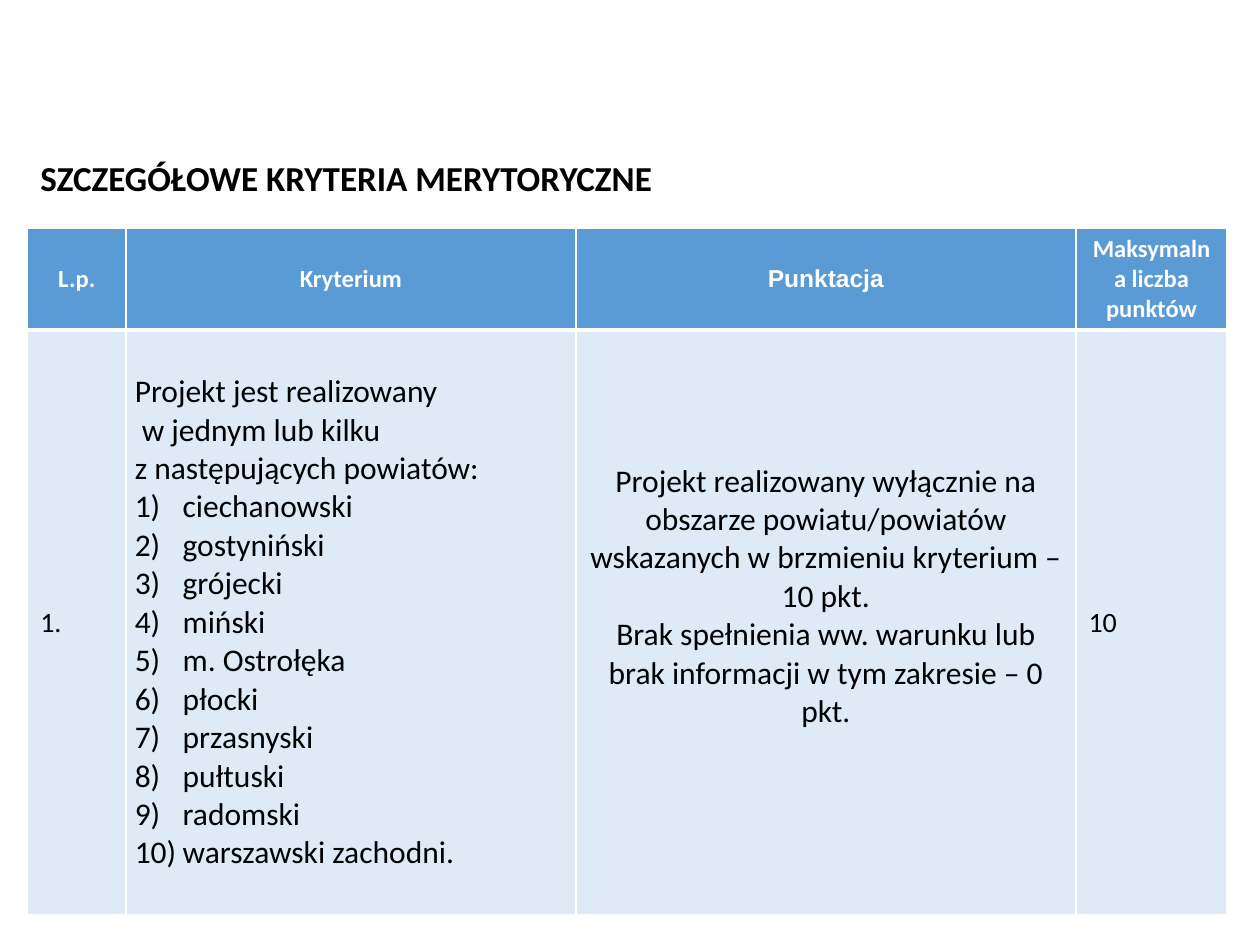
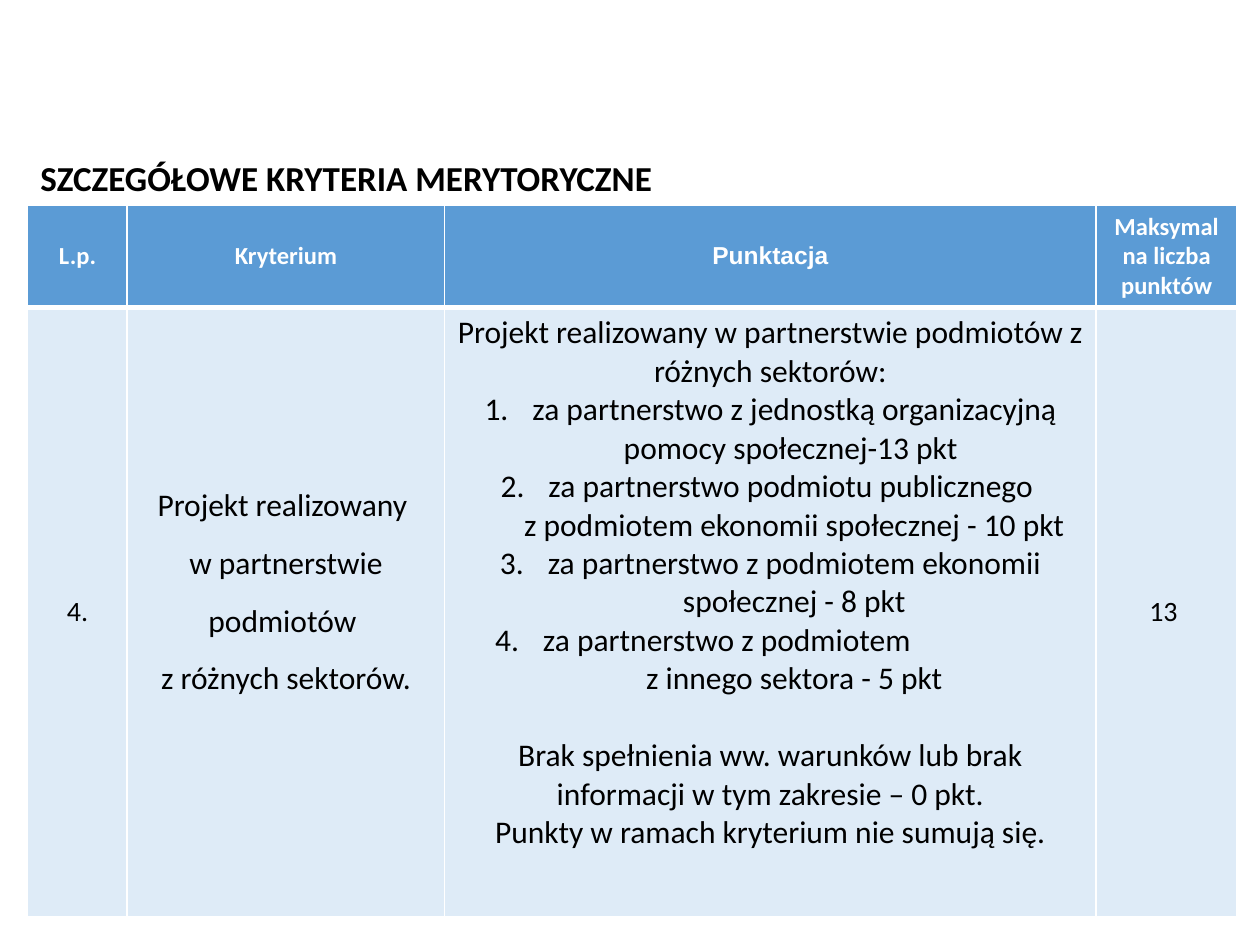
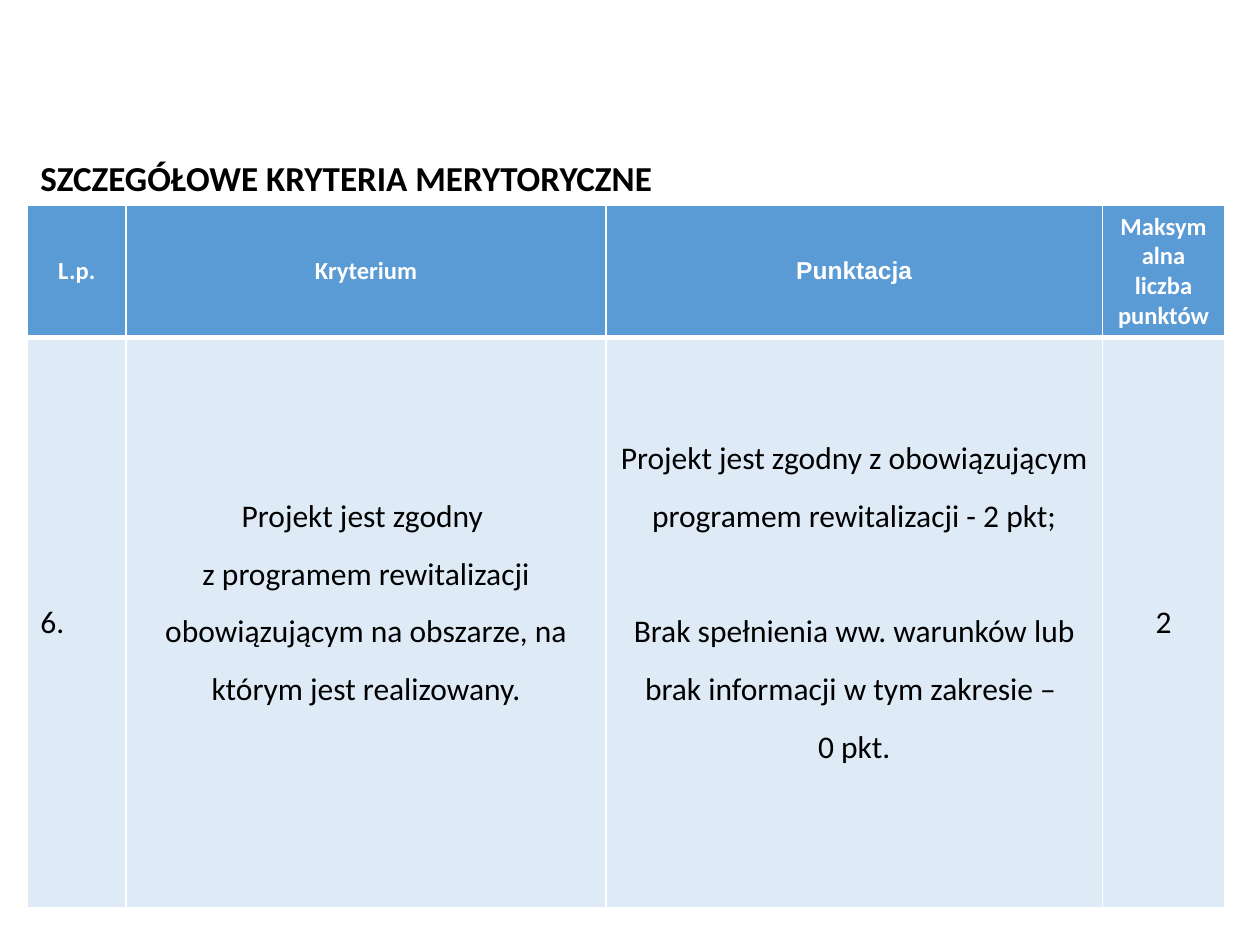
from dataclasses import dataclass, field

from lxml import etree
from pptx import Presentation
from pptx import util as u
from pptx.dml.color import RGBColor
from pptx.enum import text
from pptx.oxml import ns

WHITE = RGBColor(0xFF, 0xFF, 0xFF)
BLACK = RGBColor(0x00, 0x00, 0x00)
HEADER_BLUE = RGBColor(0x5B, 0x9B, 0xD5)
ROW_BLUE = RGBColor(0xDE, 0xEB, 0xF7)
LEFT, CENTER = text.PP_ALIGN.LEFT, text.PP_ALIGN.CENTER
MIDDLE = text.MSO_ANCHOR.MIDDLE

HEADING = "SZCZEGÓŁOWE KRYTERIA MERYTORYCZNE"
EDGE = 0.22
HEADING_BOX = (EDGE, 1.19, 9.35, 0.44)
HEADING_FORMAT = {"name": "Calibri", "size": u.Pt(20), "bold": True}
HEADER_FORMAT = {"name": "Calibri", "size": u.Pt(14), "bold": True}
BODY_FORMAT = {"name": "Calibri", "size": u.Pt(18), "bold": False}
HEADERS = [("L.p.", "Calibri"), ("Kryterium", "Calibri"),
           ("Punktacja", "Arial"), ("Maksymalna liczba punktów", "Calibri")]
HANGING = 0.38
COUNTIES = ["ciechanowski", "gostyniński", "grójecki", "miński", "m. Ostrołęka",
            "płocki", "przasnyski", "pułtuski", "radomski", "warszawski zachodni."]


@dataclass
class Line:
    words: str
    align: int = CENTER
    size: int = 18
    spacing: float = 1.0
    before: int = 0
    number: str = ""
    start: int = 1
    indent: float = 0


@dataclass
class Content:
    lines: list
    margins: dict = field(default_factory=dict)


def set_attributes(target, values):
    for name, value in values.items():
        setattr(target, name, value)


def criterion(*lines, bottom=0):
    return Content(lines, {"margin_left": u.Inches(0.07), "margin_right": u.Inches(0.07),
                           "margin_top": 0, "margin_bottom": u.Inches(bottom)})


def scoring(*lines, bottom=0.05):
    return Content(lines, {"margin_bottom": u.Inches(bottom)})


def single(words, align=CENTER, size=16):
    return Content([Line(words, align, size)])


def style_runs(paragraph, values, color):
    for run in paragraph.runs:
        set_attributes(run.font, values)
        run.font.color.rgb = color


def set_indent(paragraph, line):
    properties = paragraph._p.get_or_add_pPr()
    properties.set("marL", str(u.Inches(line.indent)))
    if line.number:
        properties.set("indent", str(-u.Inches(HANGING)))
        numbering = etree.SubElement(properties, ns.qn("a:buAutoNum"), type=line.number)
        if line.start > 1:
            numbering.set("startAt", str(line.start))


def write_line(paragraph, line, values, color):
    paragraph.text = line.words
    if line.indent:
        set_indent(paragraph, line)
    set_attributes(paragraph, {"alignment": line.align, "line_spacing": line.spacing,
                               "space_before": u.Pt(line.before)})
    style_runs(paragraph, {**values, "size": u.Pt(line.size)}, color)


def draw_borders(cell, widths):
    properties = cell._tc.get_or_add_tcPr()
    for side, width in widths.items():
        border = etree.SubElement(properties, ns.qn(f"a:ln{side}"), w=str(u.Pt(width)))
        fill = etree.SubElement(border, ns.qn("a:solidFill"))
        etree.SubElement(fill, ns.qn("a:srgbClr"), val=str(WHITE))


def fill_cell(cell, content, values, color, background, borders):
    draw_borders(cell, borders)
    cell.fill.solid()
    cell.fill.fore_color.rgb = background
    set_attributes(cell, {"vertical_anchor": MIDDLE, **content.margins})
    frame = cell.text_frame
    for index, line in enumerate(content.lines):
        paragraph = frame.add_paragraph() if index else frame.paragraphs[0]
        write_line(paragraph, line, values, color)


def add_heading(slide, box):
    title = slide.shapes.title
    set_attributes(title, dict(zip(("left", "top", "width", "height"), map(u.Inches, box))))
    frame = title.text_frame
    frame.text = HEADING
    set_attributes(frame, {"vertical_anchor": MIDDLE, "word_wrap": True,
                           "auto_size": text.MSO_AUTO_SIZE.NONE})
    frame.paragraphs[0].alignment = LEFT
    style_runs(frame.paragraphs[0], HEADING_FORMAT, BLACK)


def add_criteria_table(slide, left, top, columns, rows, contents):
    box = map(u.Inches, (left, top, sum(columns), sum(rows)))
    table = slide.shapes.add_table(len(rows), len(columns), *box).table
    for column, width in zip(table.columns, columns):
        column.width = u.Inches(width)
    for row, height in zip(table.rows, rows):
        row.height = u.Inches(height)
    for index, (label, font) in enumerate(HEADERS):
        fill_cell(table.cell(0, index), Content([Line(label, size=14)]),
                  {**HEADER_FORMAT, "name": font}, WHITE, HEADER_BLUE,
                  {"L": 1, "R": 1, "T": 1, "B": 3})
    for index, content in enumerate(contents):
        fill_cell(table.cell(1, index), content, BODY_FORMAT, BLACK, ROW_BLUE,
                  {"L": 1, "R": 1, "T": 3, "B": 1})


def numbered(words, style, align=CENTER, **options):
    return Line(words, align, number=style, **{"indent": HANGING, **options})


CRITERIA = [
    dict(top=1.81, columns=(0.78, 3.57, 3.97, 1.2), rows=(0.81, 4.64), contents=[
        single("1.", LEFT),
        criterion(Line("Projekt jest realizowany\n w jednym lub kilku \nz następujących powiatów:", LEFT),
                  *[numbered(county, "arabicParenR", LEFT) for county in COUNTIES]),
        scoring(Line("Projekt realizowany wyłącznie na obszarze powiatu/powiatów "
                     "wskazanych w brzmieniu kryterium – 10 pkt."),
                Line("Brak spełnienia ww. warunku lub brak informacji w tym zakresie – 0 pkt."),
                bottom=0.46),
        single("10", LEFT)]),
    dict(top=1.63, columns=(0.79, 2.52, 5.17, 1.12), rows=(0.8, 4.83), contents=[
        single("4."),
        criterion(Line("Projekt realizowany \nw partnerstwie podmiotów \nz różnych sektorów.",
                       spacing=1.5), bottom=0.46),
        scoring(Line("Projekt realizowany w partnerstwie podmiotów z różnych sektorów:"),
                numbered("za partnerstwo z jednostką organizacyjną pomocy społecznej-13 pkt ",
                         "arabicPeriod"),
                numbered("za partnerstwo podmiotu publicznego \n"
                         "z podmiotem ekonomii społecznej - 10 pkt", "arabicPeriod"),
                numbered("za partnerstwo z podmiotem ekonomii społecznej - 8 pkt", "arabicPeriod"),
                numbered("za partnerstwo z podmiotem", "arabicPeriod", LEFT, start=4, indent=0.68),
                Line("z innego sektora - 5 pkt", indent=HANGING),
                Line("Brak spełnienia ww. warunków lub brak informacji w tym zakresie – 0 pkt.",
                     before=22),
                Line("Punkty w ramach kryterium nie sumują się."),
                bottom=0.51),
        single("13 ")]),
    dict(top=1.63, columns=(0.78, 3.81, 3.94, 0.97), rows=(1.04, 4.53), contents=[
        single("6.", LEFT, 18),
        criterion(Line("Projekt jest zgodny \nz programem rewitalizacji obowiązującym "
                       "na obszarze, na którym jest realizowany.", spacing=1.5), bottom=0.46),
        scoring(Line("Projekt jest zgodny z obowiązującym programem rewitalizacji - 2 pkt;",
                     spacing=1.5),
                Line("Brak spełnienia ww. warunków lub brak informacji w tym zakresie – \n0 pkt.",
                     spacing=1.5, before=33),
                bottom=0.51),
        single("2", size=18)]),
]


def main():
    presentation = Presentation()
    set_attributes(presentation, {"slide_width": u.Inches(10), "slide_height": u.Inches(7.5)})
    for criteria in CRITERIA:
        slide = presentation.slides.add_slide(presentation.slide_layouts[5])
        add_criteria_table(slide, EDGE, **criteria)
        add_heading(slide, HEADING_BOX)
    presentation.save("out.pptx")


if __name__ == "__main__":
    main()
